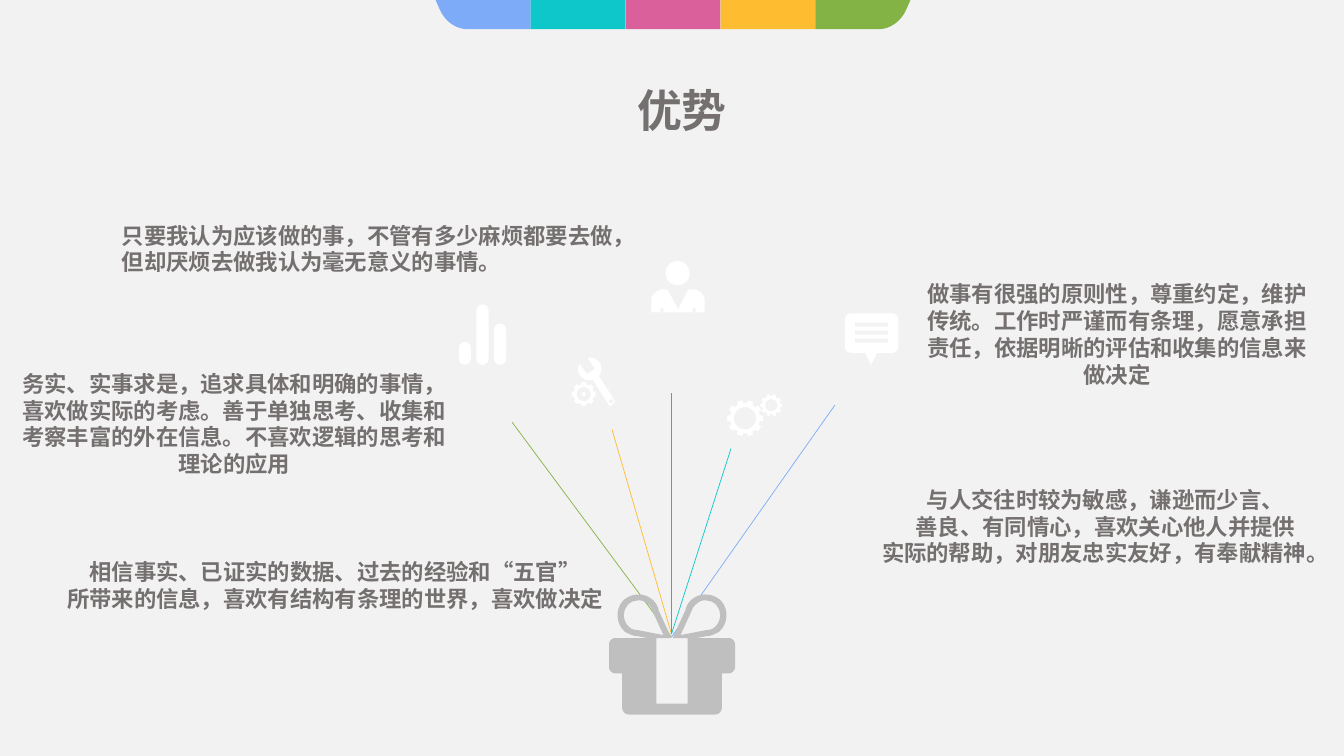
import math
from dataclasses import dataclass
from typing import NamedTuple

import pptx
import pptx.dml.color
import pptx.enum.shapes
import pptx.enum.text
import pptx.oxml
import pptx.oxml.ns
import pptx.util
from pptx.util import Inches

SHAPES = pptx.enum.shapes.MSO_SHAPE
ALIGN = pptx.enum.text.PP_ALIGN


@dataclass(frozen=True)
class Theme:
    font: str = "Noto Sans CJK JP"
    background: str = "F2F2F2"
    text: str = "757070"
    icon: str = "FFFFFF"
    gift: str = "BFBFBF"
    blue: str = "7EABF8"
    teal: str = "0EC7CA"
    pink: str = "DA609C"
    yellow: str = "FEBC30"
    green: str = "83B345"
    title_size: float = 32
    body_size: float = 16
    leading: float = 1.2


class Box(NamedTuple):
    left: float
    top: float
    width: float
    height: float


THEME = Theme()


def rgb(colour):
    return pptx.dml.color.RGBColor.from_string(colour)


def paint(shape, colour):
    shape.fill.solid()
    shape.fill.fore_color.rgb = rgb(colour)
    shape.line.fill.background()
    shape.shadow.inherit = False


def trace(path, steps=8):
    points = []
    for item in path:
        if len(item) == 2:
            points.append(item)
            continue
        corners = [points[-1], item[:2], item[2:4], item[4:]]
        for step in range(1, steps + 1):
            t = step / steps
            weights = ((1 - t) ** 3, 3 * t * (1 - t) ** 2, 3 * t * t * (1 - t), t ** 3)
            points.append(tuple(sum(w * c[axis] for w, c in zip(weights, corners)) for axis in (0, 1)))
    return points


def mirror(points, axis):
    return [(2 * axis - x, y) for x, y in reversed(points)]


def arc(x, y, radius, start=0, end=360, steps=32):
    angles = [math.radians(start + (end - start) * step / steps) for step in range(steps + 1)]
    return [(x + radius * math.cos(a), y + radius * math.sin(a)) for a in angles]


def rectangle(left, top, right, bottom):
    return [(left, top), (right, top), (right, bottom), (left, bottom)]


def gear(x, y, outer, root, hole, teeth):
    points = []
    pitch = 360 / teeth
    for tooth in range(teeth):
        for radius, turn in ((root, -0.31), (outer, -0.24), (outer, 0.24), (root, 0.31)):
            angle = math.radians(pitch * (tooth + turn))
            points.append((x + radius * math.cos(angle), y + radius * math.sin(angle)))
    return [points, arc(x, y, hole)]


def draw_outline(shapes, box, contours, colour):
    placed = [[(Inches(box.left + x), Inches(box.top + y)) for x, y in points] for points in contours]
    builder = shapes.build_freeform(*placed[0][0], scale=1.0)
    builder.add_line_segments(placed[0][1:], close=True)
    for points in placed[1:]:
        builder.move_to(*points[0])
        builder.add_line_segments(points[1:], close=True)
    paint(builder.convert_to_shape(), colour)


def draw_preset(shapes, kind, box, colour):
    shape = shapes.add_shape(kind, *map(Inches, box))
    paint(shape, colour)
    return shape


def add_text(slide, box, text, size, alignment):
    text_frame = slide.shapes.add_textbox(*map(Inches, box)).text_frame
    text_frame.word_wrap = False
    text_frame.text = text
    for paragraph in text_frame.paragraphs:
        paragraph.alignment = alignment
        paragraph.line_spacing = pptx.util.Pt(size * THEME.leading)
        for run in paragraph.runs:
            run.font.name = THEME.font
            run.font.size = pptx.util.Pt(size)
            run.font.bold = True
            run.font.color.rgb = rgb(THEME.text)
            east_asian = pptx.oxml.ns.qn("a:ea")
            run.font._element.find(pptx.oxml.ns.qn("a:latin")).addnext(
                run.font._element.makeelement(east_asian, {"typeface": THEME.font}))


def draw_header(slide, box):
    colours = (THEME.blue, THEME.teal, THEME.pink, THEME.yellow, THEME.green)
    width, height = box.width / len(colours), box.height
    end = trace([(0, 0), (width, 0), (width, height), (0.32, height), (0.2, height, 0.09, 0.21, 0.04, 0.09)])
    ends = {0: end, len(colours) - 1: mirror(end, width / 2)}
    for index, colour in enumerate(colours):
        part = Box(box.left + index * width, box.top, width, height)
        if index in ends:
            draw_outline(slide.shapes, part, [ends[index]], colour)
        else:
            draw_preset(slide.shapes, SHAPES.RECTANGLE, part, colour)


def draw_rays(slide, box):
    rays = ((0, 0.29, 2.42, THEME.green), (0.99, 0.36, 2.39, THEME.yellow), (1.58, 0, 2.39, THEME.pink),
            (2.17, 0.55, 2.39, THEME.teal), (3.2, 0.12, 2.42, THEME.blue))
    for x, y, end, colour in rays:
        connector = slide.shapes.add_connector(
            pptx.enum.shapes.MSO_CONNECTOR.STRAIGHT, Inches(box.left + x), Inches(box.top + y),
            Inches(box.left + 1.58), Inches(box.top + end))
        connector.line.color.rgb = rgb(colour)
        connector.line.width = pptx.util.Pt(0.5)
        properties = connector._element.spPr
        properties.append(properties.makeelement(pptx.oxml.ns.qn("a:effectLst"), {}))


def draw_gift(slide, box):
    axis = box.width / 2
    half = trace([
        (0.78, 1.09), (0.78, 0.44), (0.63, 0.44), (0.76, 0.16), (0.76, 0.15), (0.77, 0.12, 0.79, 0.08, 0.83, 0.05),
        (0.92, -0.02, 1.05, 0, 1.12, 0.08), (1.19, 0.17, 1.18, 0.3, 1.09, 0.38),
        (1.05, 0.4, 1.01, 0.42, 0.98, 0.42), (0.97, 0.42), (0.87, 0.44), (1.19, 0.44),
        (1.22, 0.44, 1.25, 0.47, 1.25, 0.5), (1.25, 0.73), (1.25, 0.76, 1.22, 0.79, 1.19, 0.79),
        (1.12, 0.79), (1.12, 1.12), (1.12, 1.17, 1.09, 1.2, 1.04, 1.2)])
    loop = trace([
        (0.98, 0.07), (0.94, 0.06, 0.9, 0.07, 0.87, 0.1), (0.84, 0.12, 0.83, 0.14, 0.82, 0.17), (0.71, 0.41),
        (0.97, 0.36), (1, 0.36, 1.03, 0.35, 1.05, 0.33), (1.11, 0.28, 1.12, 0.18, 1.07, 0.12),
        (1.05, 0.09, 1.01, 0.07, 0.98, 0.07)])
    draw_outline(slide.shapes, box, [half + mirror(half, axis), loop, mirror(loop, axis)], THEME.gift)


def draw_tools(shapes, box):
    wrench = trace([
        (0.43, 0.44), (0.27, 0.19), (0.3, 0.15, 0.3, 0.1, 0.28, 0.06), (0.25, 0.02, 0.2, 0, 0.16, 0.01),
        (0.23, 0.12), (0.15, 0.17), (0.08, 0.07), (0.06, 0.1, 0.06, 0.15, 0.08, 0.18),
        (0.11, 0.23, 0.16, 0.24, 0.21, 0.23), (0.37, 0.48), (0.37, 0.49, 0.38, 0.49, 0.4, 0.48), (0.42, 0.46)])
    draw_outline(shapes, box, [wrench, arc(0.39, 0.44, 0.02)], THEME.icon)
    draw_outline(shapes, box, gear(0.12, 0.37, 0.12, 0.1, 0.07, 8), THEME.icon)
    draw_preset(shapes, SHAPES.OVAL, Box(box.left + 0.1, box.top + 0.35, 0.04, 0.04), THEME.icon)


def draw_gears(shapes, box):
    for measures in ((0.18, 0.24, 0.18, 0.15, 0.11), (0.44, 0.11, 0.11, 0.09, 0.06)):
        draw_outline(shapes, box, gear(*measures, teeth=10), THEME.icon)


def draw_bars(shapes, box):
    for index, height in enumerate((0.23, 0.6, 0.41)):
        bar = Box(box.left + index * 0.175, box.top + box.height - height, 0.12, height)
        draw_preset(shapes, SHAPES.ROUNDED_RECTANGLE, bar, THEME.icon).adjustments[0] = 0.5


def draw_speech(shapes, box):
    radius, bottom = 0.06, 0.39
    body = []
    for x, y, start in ((box.width - radius, bottom - radius, 0), (radius, bottom - radius, 90),
                        (radius, radius, 180), (box.width - radius, radius, 270)):
        body += arc(x, y, radius, start, start + 90, 8)
    slits = [rectangle(0.1, y, 0.43, y + 0.04) for y in (0.09, 0.17, 0.25)]
    draw_outline(shapes, box, [[(0.19, 0.37), (0.33, 0.37), (0.26, 0.51)]], THEME.icon)
    draw_outline(shapes, box, [body] + slits, THEME.icon)


def draw_person(shapes, box):
    draw_preset(shapes, SHAPES.OVAL, Box(box.left + 0.14, box.top, 0.24, 0.24), THEME.icon)
    half = trace([(0.26, 0.49), (0.37, 0.28), (0.41, 0.28), (0.47, 0.28, 0.53, 0.33, 0.53, 0.39),
                  (0.53, 0.51), (0.44, 0.51), (0.44, 0.47), (0.41, 0.47), (0.41, 0.51)])
    draw_outline(shapes, box, [half + mirror(half, box.width / 2)], THEME.icon)


def build_strengths_slide(presentation):
    slide = presentation.slides.add_slide(presentation.slide_layouts[6])
    slide.background.fill.solid()
    slide.background.fill.fore_color.rgb = rgb(THEME.background)
    draw_header(slide, Box(4.32, 0, 4.71, 0.29))
    add_text(slide, Box(6.22, 0.77, 1.09, 0.64), "优势", THEME.title_size, ALIGN.LEFT)
    draw_rays(slide, Box(5.08, 3.9, 3.2, 2.42))
    draw_gift(slide, Box(6.04, 5.89, 1.25, 1.2))
    for draw_icon, box in (
            (draw_tools, Box(5.67, 3.54, 0.43, 0.49)), (draw_gears, Box(7.21, 3.91, 0.55, 0.42)),
            (draw_bars, Box(4.55, 3.02, 0.47, 0.6)), (draw_speech, Box(8.38, 3.11, 0.53, 0.51)),
            (draw_person, Box(6.46, 2.59, 0.53, 0.51))):
        draw_icon(slide.shapes.add_group_shape().shapes, box)
    for box, alignment, text in (
            (Box(1.11, 2.15, 5.34, 0.87), ALIGN.LEFT,
             "只要我认为应该做的事，不管有多少麻烦都要去做，\n但却厌烦去做我认为毫无意义的事情。"),
            (Box(0.1, 3.62, 4.45, 1.43), ALIGN.CENTER,
             "务实、实事求是，追求具体和明确的事情，\n喜欢做实际的考虑。善于单独思考、收集和\n"
             "考察丰富的外在信息。不喜欢逻辑的思考和\n理论的应用"),
            (Box(0.54, 5.49, 5.57, 1.05), ALIGN.CENTER,
             "相信事实、已证实的数据、过去的经验和“五官”\n所带来的信息，喜欢有结构有条理的世界，喜欢做决定"),
            (Box(9.08, 2.73, 4, 1.4), ALIGN.CENTER,
             "做事有很强的原则性，尊重约定，维护\n传统。工作时严谨而有条理，愿意承担\n"
             "责任，依据明晰的评估和收集的信息来\n做决定"),
            (Box(8.63, 4.77, 4.67, 1.58), ALIGN.CENTER,
             "与人交往时较为敏感，谦逊而少言、\n善良、有同情心，喜欢关心他人并提供\n"
             "实际的帮助，对朋友忠实友好，有奉献精神。")):
        add_text(slide, box, text, THEME.body_size, alignment)


def main():
    presentation = pptx.Presentation()
    presentation.slide_width = Inches(13.33)
    presentation.slide_height = Inches(7.5)
    build_strengths_slide(presentation)
    presentation.save("out.pptx")


if __name__ == "__main__":
    main()
